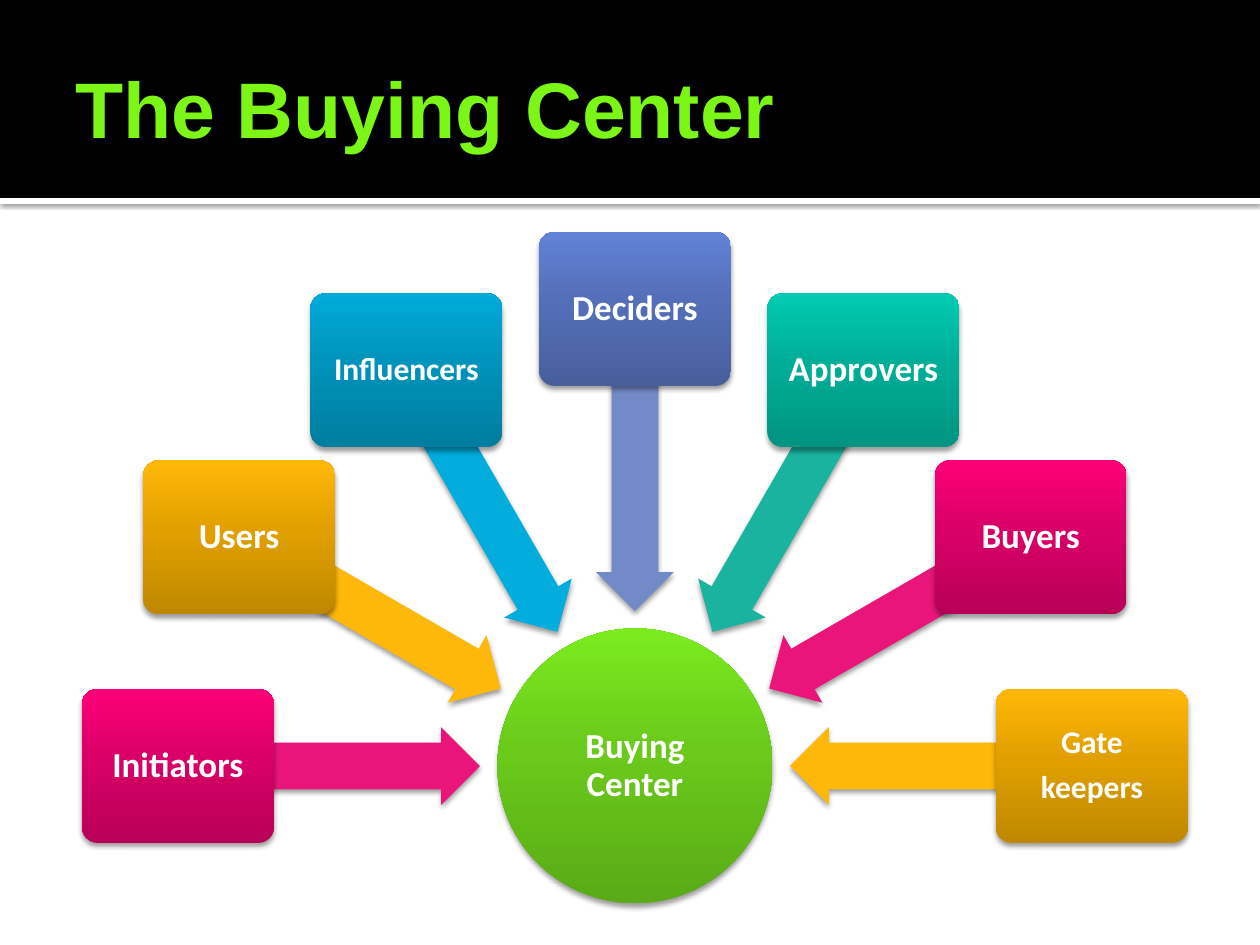
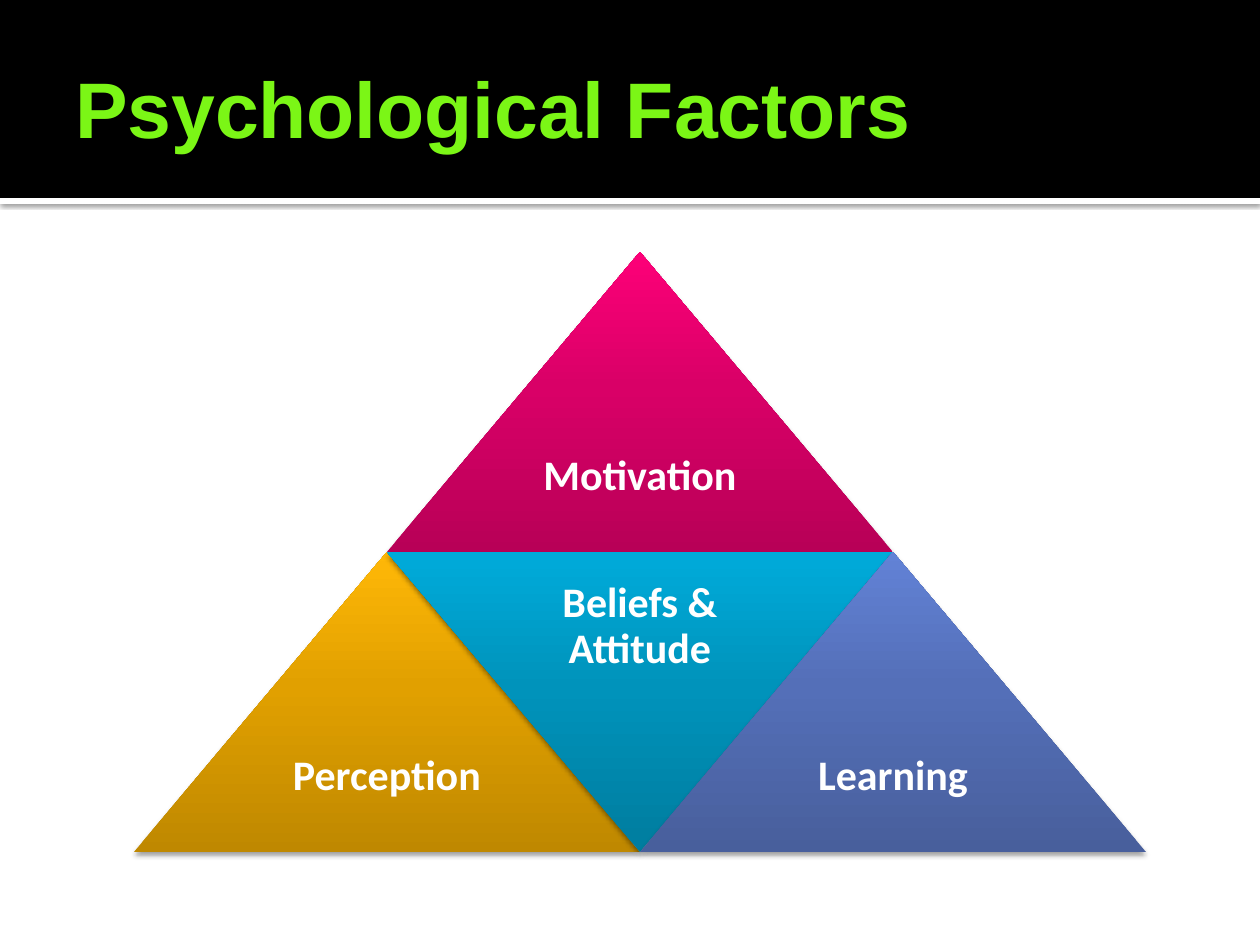
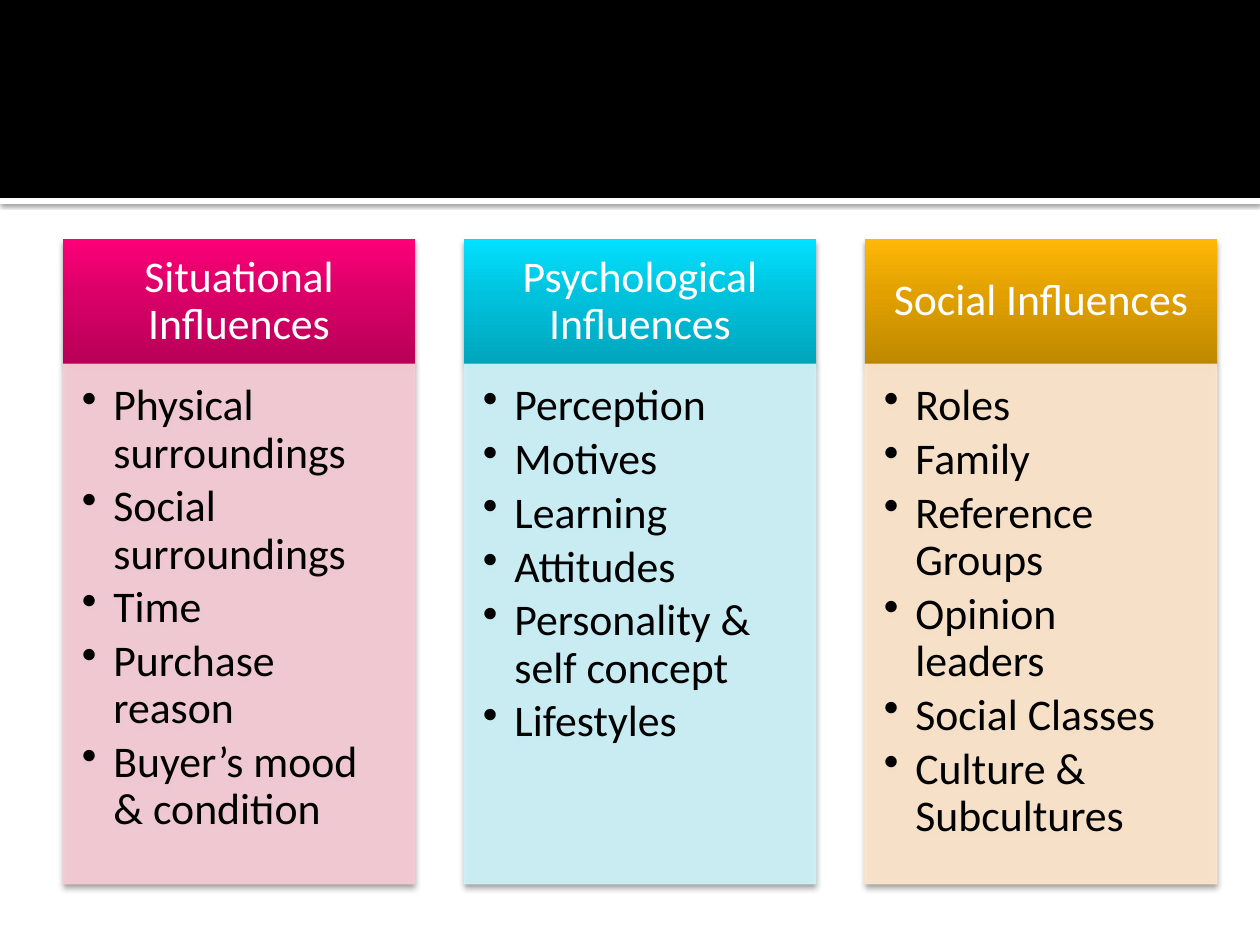
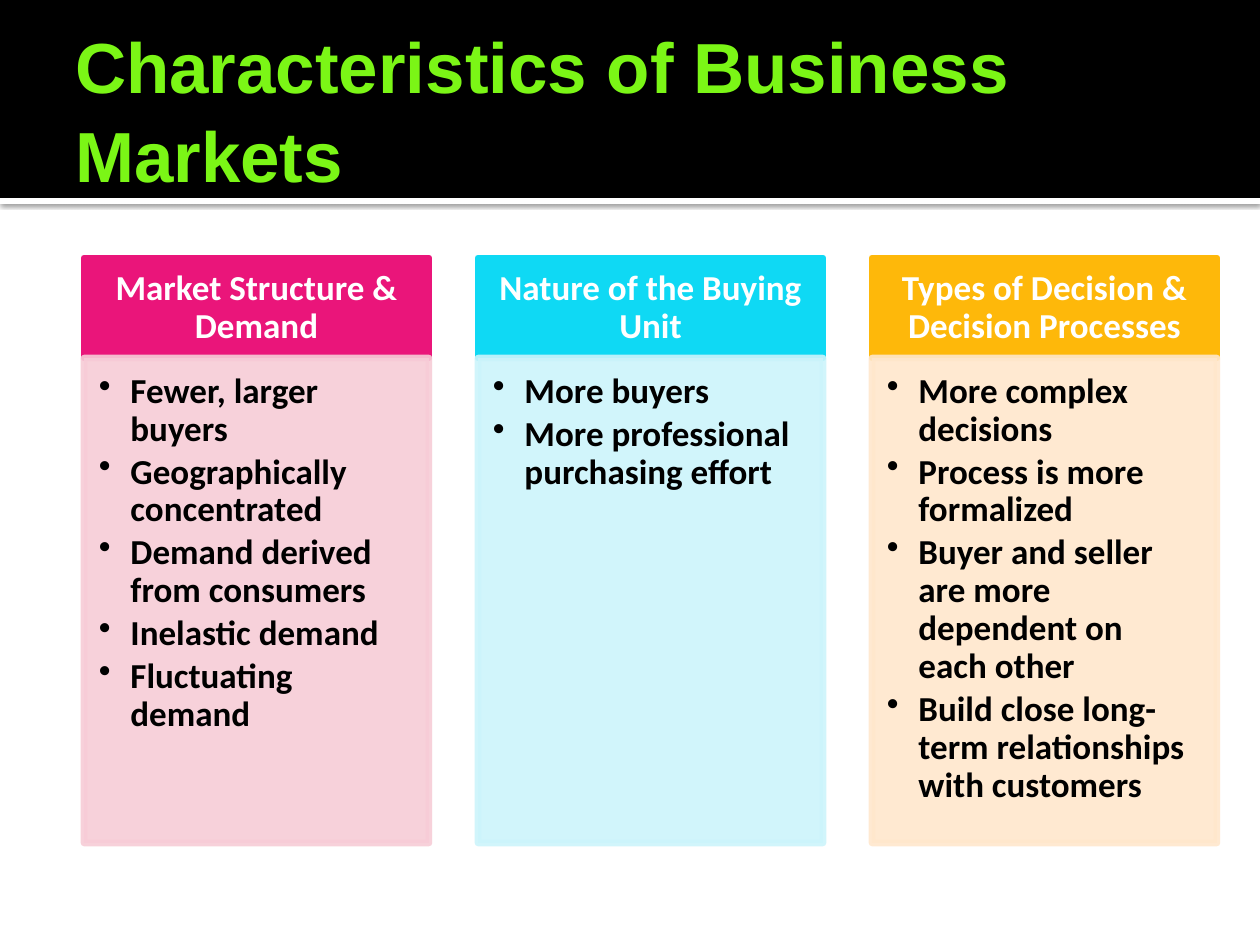
from copy import deepcopy
from math import cos, radians, sin

from pptx import Presentation
from pptx.dml.color import RGBColor
from pptx.enum.shapes import MSO_SHAPE as SHAPE
from pptx.enum.text import MSO_ANCHOR as ANCHOR, MSO_AUTO_SIZE as AUTO_SIZE, PP_ALIGN as ALIGN
from pptx.oxml.ns import qn
from pptx.util import Pt
from lxml import etree

PX = 914400 / 126  # EMU per px

BLACK = RGBColor(0x00, 0x00, 0x00)
WHITE = RGBColor(0xFF, 0xFF, 0xFF)
LIME = RGBColor(0x7B, 0xF6, 0x16)
PINK = RGBColor(0xEA, 0x15, 0x7A)
AMBER = RGBColor(0xFE, 0xB8, 0x0A)
BLUE = RGBColor(0x00, 0xAD, 0xDC)
INDIGO = RGBColor(0x73, 0x8A, 0xC8)
TEAL = RGBColor(0x1A, 0xB3, 0x9F)
CYAN = RGBColor(0x0F, 0xD9, 0xF4)
PALE_PINK = RGBColor(0xF7, 0xCC, 0xD7)
PALE_CYAN = RGBColor(0xCC, 0xF4, 0xFB)
PALE_AMBER = RGBColor(0xFF, 0xE7, 0xCC)

# Gradients run from dark at the bottom to light at the top
STOPS = (0, 0.55, 1)
PINK_GRAD = [RGBColor(0xB8, 0x00, 0x57), RGBColor(0xD9, 0x00, 0x67), RGBColor(0xFD, 0x00, 0x78)]
AMBER_GRAD = [RGBColor(0xBF, 0x88, 0x00), RGBColor(0xE1, 0xA0, 0x00), RGBColor(0xFF, 0xB8, 0x07)]
BLUE_GRAD = [RGBColor(0x00, 0x7D, 0x9F), RGBColor(0x00, 0x93, 0xBB), RGBColor(0x00, 0xAB, 0xDA)]
INDIGO_GRAD = [RGBColor(0x48, 0x5F, 0x9C), RGBColor(0x54, 0x6F, 0xB8), RGBColor(0x62, 0x82, 0xD6)]
TEAL_GRAD = [RGBColor(0x00, 0x94, 0x81), RGBColor(0x00, 0xAE, 0x98), RGBColor(0x00, 0xCB, 0xB1)]
CYAN_GRAD = [RGBColor(0x00, 0xA5, 0xBC), RGBColor(0x00, 0xC2, 0xDD), RGBColor(0x02, 0xE1, 0xFF)]
GREEN_GRAD = [RGBColor(0x5A, 0xAB, 0x17), RGBColor(0x6A, 0xC9, 0x1B), RGBColor(0x7B, 0xEB, 0x1F)]

# Shadow: opacity in percent, blur and distance in points
SOFT = (38, 3.1, 2)
BAND_SHADOW = (60, 2.5, 0.8)


def add_shape(s, kind, x, y, w, h, fill, shadow=SOFT, line=None, alpha=100):
    """Add a shape; fill is one colour or three gradient colours, line a width in points."""
    sp = s.shapes.add_shape(kind, *[round(v * PX) for v in (x, y, w, h)])
    if isinstance(fill, list):
        sp.fill.gradient()
        sp.fill.gradient_angle = 90
        stop_list = sp.element.find(".//" + qn("a:gsLst"))
        stop_list.insert(1, deepcopy(stop_list[0]))
        for stop, pos, rgb in zip(sp.fill.gradient_stops, STOPS, fill):
            stop.position = pos
            stop.color.rgb = rgb
    else:
        sp.fill.solid()
        sp.fill.fore_color.rgb = fill
    if line:
        sp.line.color.rgb = fill
        sp.line.width = Pt(line)
    else:
        sp.line.fill.background()
    if alpha < 100:
        for clr in sp.element.spPr.iter(qn("a:srgbClr")):
            etree.SubElement(clr, qn("a:alpha"), val=str(alpha * 1000))
    sp.shadow.inherit = False
    if shadow:
        opacity, blur, dist = shadow
        effects = sp.element.spPr.find(qn("a:effectLst"))
        outer = etree.SubElement(effects, qn("a:outerShdw"), blurRad=str(Pt(blur)),
                                 dist=str(Pt(dist)), dir="5400000", rotWithShape="0")
        clr = etree.SubElement(outer, qn("a:srgbClr"), val="000000")
        etree.SubElement(clr, qn("a:alpha"), val=str(opacity * 1000))
    return sp


def write(sp, lines, size, insets, bold=True, bullets=False):
    """Fill a shape with centred white labels, or with black bulleted lines."""
    tf = sp.text_frame
    tf.word_wrap = True
    tf.vertical_anchor = ANCHOR.TOP if bullets else ANCHOR.MIDDLE
    for side, inset in zip(("left", "top", "right", "bottom"), insets):
        setattr(tf, "margin_" + side, round(inset * PX))
    for i, line in enumerate(lines):
        p = tf.add_paragraph() if i else tf.paragraphs[0]
        p.alignment = ALIGN.LEFT if bullets else ALIGN.CENTER
        p.line_spacing = 0.9
        p.space_after = Pt(size * (0.15 if bullets else 0.35))
        if bullets:
            p.level = 1
            pPr = p._p.get_or_add_pPr()
            pPr.set("marL", "228600")
            pPr.set("indent", "-228600")
            etree.SubElement(pPr, qn("a:buChar"), char="•")
        r = p.add_run()
        r.text = line
        r.font.name = "Calibri"
        r.font.size = Pt(size)
        r.font.bold = bold
        r.font.color.rgb = BLACK if bullets else WHITE


prs = Presentation()
prs.slide_width, prs.slide_height = round(1260 * PX), round(945 * PX)

# Slides and their titles
TITLES = [
    ("The Buying Center", 45, 1),
    ("Psychological Factors", 45, 1),
    None,
    ("Characteristics of Business Markets", 40.5, 1.05),
]
slides = []
for title in TITLES:
    s = prs.slides.add_slide(prs.slide_layouts[5 if title else 6])
    slides.append(s)
    if not title:
        continue
    text, size, spacing = title
    sp = s.shapes.title
    sp.left, sp.top, sp.width, sp.height = [round(v * PX) for v in (63, 21, 1134, 173)]
    tf = sp.text_frame
    tf.text = text
    frame = {"auto_size": AUTO_SIZE.NONE, "word_wrap": True, "vertical_anchor": ANCHOR.MIDDLE,
             "margin_left": round(12 * PX), "margin_right": round(6 * PX),
             "margin_top": round(6 * PX), "margin_bottom": round(6 * PX)}
    for name, value in frame.items():
        setattr(tf, name, value)
    p = tf.paragraphs[0]
    p.alignment = ALIGN.LEFT
    p.line_spacing = spacing
    font = p.runs[0].font
    for name, value in {"name": "Arial", "size": Pt(size), "bold": True}.items():
        setattr(font, name, value)
    font.color.rgb = LIME

buying, factors, influences, markets = slides

# Title band and the strip below it, moved to the master behind its placeholders
strip = add_shape(buying, SHAPE.RECTANGLE, 0, 198, 1260, 6, WHITE, BAND_SHADOW)
band = add_shape(buying, SHAPE.RECTANGLE, 0, 0, 1260, 198, BLACK, None)
for i, sp in enumerate((strip, band)):
    sp.element.nvSpPr.cNvPr.set("id", str(100 + i))
    prs.slide_master.shapes.element.insert(2 + i, sp.element)

# Slide 1: roles on a half circle, each pointing at the hub
HUB_X, HUB_Y, HUB_D = 635, 766, 275
ARROW_R, ARROW_W, ARROW_H = 306, 302, 78
ROLE_R, ROLE_W, ROLE_H = 457, 192, 154
ROLES = [
    (["Initiators"], 20, PINK, PINK_GRAD),
    (["Users"], 20, AMBER, AMBER_GRAD),
    (["Influencers"], 18, BLUE, BLUE_GRAD),
    (["Deciders"], 20, INDIGO, INDIGO_GRAD),
    (["Approvers"], 20, TEAL, TEAL_GRAD),
    (["Buyers"], 20, PINK, PINK_GRAD),
    (["Gate", "keepers"], 18, AMBER, AMBER_GRAD),
]
hub = add_shape(buying, SHAPE.OVAL, HUB_X - HUB_D / 2, HUB_Y - HUB_D / 2, HUB_D, HUB_D, GREEN_GRAD)
write(hub, ["Buying Center"], 20, [1] * 4)
for i, (lines, size, color, grad) in enumerate(ROLES):
    angle = 180 + 30 * i
    dx, dy = cos(radians(angle)), sin(radians(angle))
    arrow = add_shape(buying, SHAPE.LEFT_ARROW, HUB_X + ARROW_R * dx - ARROW_W / 2,
                      HUB_Y + ARROW_R * dy - ARROW_H / 2, ARROW_W, ARROW_H, color)
    arrow.rotation = angle % 360
    arrow.adjustments[0] = 0.6
    role = add_shape(buying, SHAPE.ROUNDED_RECTANGLE, HUB_X + ROLE_R * dx - ROLE_W / 2,
                     HUB_Y + ROLE_R * dy - ROLE_H / 2, ROLE_W, ROLE_H, grad)
    role.adjustments[0] = 0.1
    write(role, lines, size, [5] * 4)

# Slide 2: pyramid of four triangles, placed by half widths and rows
TRI_W, TRI_H = 506, 300
TRIANGLES = [
    ("Motivation", SHAPE.ISOSCELES_TRIANGLE, 1, 0, PINK_GRAD),
    ("Perception", SHAPE.ISOSCELES_TRIANGLE, 0, 1, AMBER_GRAD),
    ("Beliefs & Attitude", SHAPE.FLOWCHART_MERGE, 1, 1, BLUE_GRAD),
    ("Learning", SHAPE.ISOSCELES_TRIANGLE, 2, 1, INDIGO_GRAD),
]
for text, kind, half, row, grad in TRIANGLES:
    sp = add_shape(factors, kind, 134 + half * TRI_W / 2, 252 + row * TRI_H, TRI_W, TRI_H, grad)
    write(sp, [text], 24, [12] * 4)

# Slides 3 and 4: three columns, each a heading over a bulleted list
INFLUENCES = [
    ("Situational Influences", PINK_GRAD, PALE_PINK,
     ["Physical surroundings", "Social surroundings", "Time", "Purchase reason",
      "Buyer’s mood & condition"]),
    ("Psychological Influences", CYAN_GRAD, PALE_CYAN,
     ["Perception", "Motives", "Learning", "Attitudes", "Personality & self concept",
      "Lifestyles"]),
    ("Social Influences", AMBER_GRAD, PALE_AMBER,
     ["Roles", "Family", "Reference Groups", "Opinion leaders", "Social Classes",
      "Culture & Subcultures"]),
]
MARKETS = [
    ("Market Structure & Demand", PINK, PALE_PINK,
     ["Fewer, larger buyers", "Geographically concentrated", "Demand derived from consumers",
      "Inelastic demand", "Fluctuating demand"]),
    ("Nature of the Buying Unit", CYAN, PALE_CYAN,
     ["More buyers", "More professional purchasing effort"]),
    ("Types of Decision & Decision Processes", AMBER, PALE_AMBER,
     ["More complex decisions", "Process is more formalized",
      "Buyer and seller are more dependent on each other",
      "Build close long-term relationships with customers"]),
]
COLUMN_SETS = [
    (influences, INFLUENCES,
     {"x": 63, "step": 401, "w": 352, "y": 239, "head_h": 125, "list_h": 520, "size": 25,
      "bold": False, "shadow": SOFT, "head_line": None, "list_line": 0.5,
      "head_insets": (24, 14, 24, 14), "list_insets": (19, 19, 24, 28)}),
    (markets, MARKETS,
     {"x": 84, "step": 394, "w": 345, "y": 258, "head_h": 100, "list_h": 485, "size": 20,
      "bold": True, "shadow": None, "head_line": 3.78, "list_line": 3.78,
      "head_insets": (20, 11, 20, 11), "list_insets": (15, 15, 20, 21)}),
]
for s, columns, f in COLUMN_SETS:
    for i, (heading, color, pale, items) in enumerate(columns):
        x = f["x"] + i * f["step"]
        head = add_shape(s, SHAPE.RECTANGLE, x, f["y"], f["w"], f["head_h"], color,
                         f["shadow"], f["head_line"])
        write(head, [heading], f["size"], f["head_insets"], f["bold"])
        body = add_shape(s, SHAPE.RECTANGLE, x, f["y"] + f["head_h"], f["w"], f["list_h"], pale,
                         f["shadow"], f["list_line"], alpha=90)
        write(body, items, f["size"], f["list_insets"], f["bold"], bullets=True)

prs.save("out.pptx")
